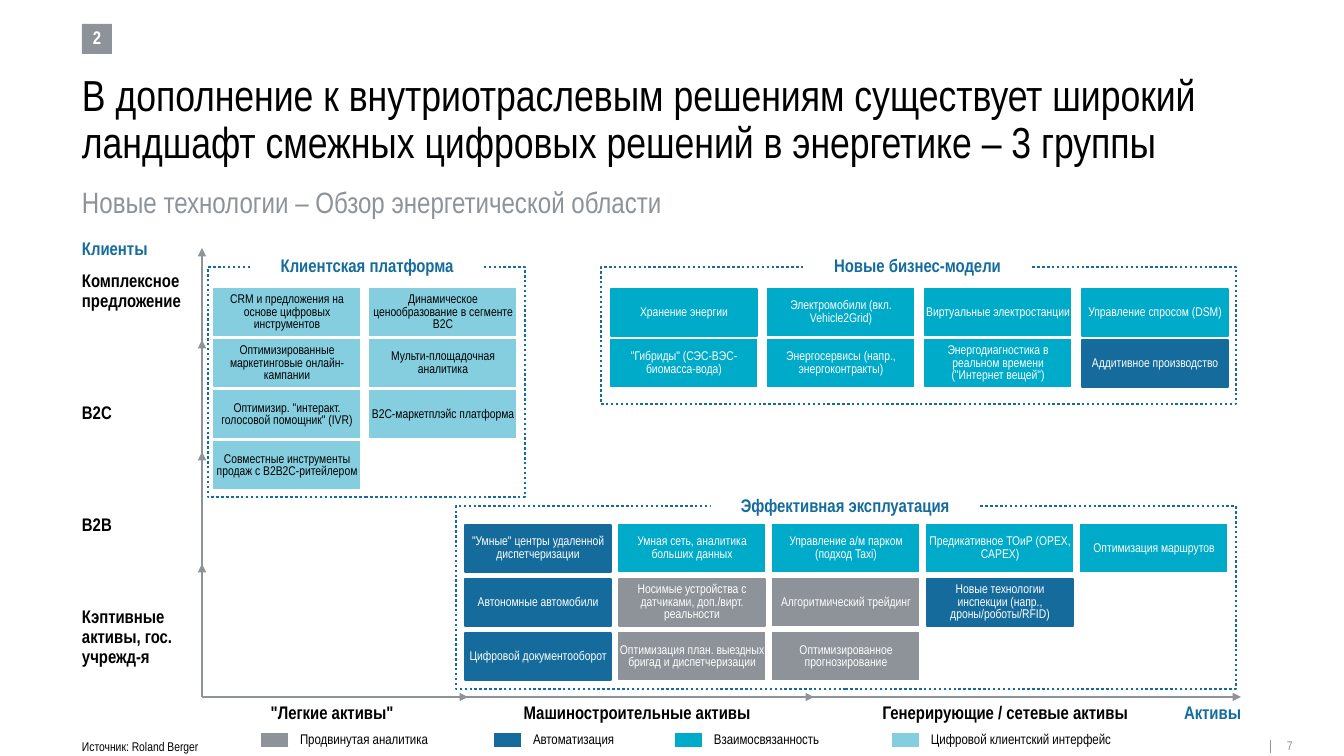
"""Builds the slide on digital solutions adjacent to the energy industry."""
from lxml.etree import SubElement
from pptx import Presentation
from pptx.dml.color import RGBColor
from pptx.enum.dml import MSO_LINE
from pptx.enum.shapes import MSO_CONNECTOR, MSO_SHAPE
from pptx.enum.text import MSO_ANCHOR as ANCHOR, PP_ALIGN as ALIGN
from pptx.oxml.ns import qn
from pptx.util import Pt

PX = 12192000 / 1344
FONT = "Arial Narrow"
COLORS = {
    "black": "000000",
    "white": "FFFFFF",
    "gray": "8D9399",
    "blue": "156C9C",
    "teal": "00AAC9",
    "light": "85CEDF",
}

deck = Presentation()
deck.slide_width, deck.slide_height = round(1344 * PX), round(756 * PX)
page = deck.slides.add_slide(deck.slide_layouts[6])


def add_box(text, place, size=13, color="black", bold=False, align=ALIGN.LEFT, anchor=ANCHOR.TOP,
            spacing=0.9, wrap=True, fill=None, line=None, weight=0.75):
    area = [round(value * PX) for value in place]
    if fill:
        box = page.shapes.add_shape(MSO_SHAPE.RECTANGLE, *area)
        box.shadow.inherit = False
        box.fill.solid()
        box.fill.fore_color.rgb = RGBColor.from_string(COLORS[fill])
        if line:
            box.line.color.rgb = RGBColor.from_string(COLORS[line])
            box.line.width = Pt(weight)
        else:
            box.line.fill.background()
    else:
        box = page.shapes.add_textbox(*area)
    frame = box.text_frame
    frame.margin_left = frame.margin_right = frame.margin_top = frame.margin_bottom = 0
    frame.word_wrap = wrap
    frame.vertical_anchor = anchor
    para = frame.paragraphs[0]
    para.text = text
    para.alignment = align
    para.line_spacing = spacing
    for span in para.runs:
        span.font.name = FONT
        span.font.size = Pt(size)
        span.font.bold = bold
        span.font.color.rgb = RGBColor.from_string(COLORS[color])
    return box


def add_line(left, top, right, bottom, weight, arrow=True):
    ends = [round(value * PX) for value in (left, top, right, bottom)]
    connector = page.shapes.add_connector(MSO_CONNECTOR.STRAIGHT, *ends)
    connector.line.color.rgb = RGBColor.from_string(COLORS["gray"])
    connector.line.width = Pt(weight)
    if arrow:
        SubElement(connector.line._get_or_add_ln(), qn("a:tailEnd"), type="triangle")
    SubElement(connector._element.spPr, qn("a:effectLst"))


add_box("2", (82, 24, 30, 30), color="white", bold=True, align=ALIGN.CENTER,
        anchor=ANCHOR.MIDDLE, wrap=False, fill="gray")
add_box("В дополнение к внутриотраслевым решениям существует широкий ландшафт смежных "
        "цифровых решений в энергетике – 3 группы", (82, 74, 1189, 95), size=31)
add_box("Новые технологии – Обзор энергетической области", (82, 188, 1189, 33),
        size=21, color="gray")

groups = [
    {
        "title": "Клиентская платформа",
        "heading": (252, 257, 230, 20),
        "panel": (208, 267, 317, 230),
        "origin": (214, 289),
        "step": (156, 51),
        "rows": [
            [("CRM и предложения на основе цифровых инструментов", "light"),
             ("Динамическое\vценообразование в сегменте B2C", "light")],
            [("Оптимизированные маркетинговые онлайн-кампании", "light"),
             ("Мульти-площадочная аналитика", "light")],
            [("Оптимизир. \"интеракт. голосовой помощник\" (IVR)", "light"),
             ("B2C-маркетплэйс платформа", "light")],
            [("Совместные инструменты продаж с B2B2C-ритейлером", "light")],
        ],
    },
    {
        "title": "Новые бизнес-модели",
        "heading": (805, 257, 225, 20),
        "panel": (601, 267, 635, 137),
        "origin": (611, 289),
        "step": (157, 51),
        "rows": [
            [("Хранение энергии", "teal"),
             ("Электромобили (вкл. Vehicle2Grid)", "teal"),
             ("Виртуальные электростанции", "teal"),
             ("Управление спросом (DSM)", "teal")],
            [("\"Гибриды\" (СЭС-ВЭС-биомасса-вода)", "teal"),
             ("Энергосервисы (напр., энергоконтракты)", "teal"),
             ("Энергодиагностика в реальном времени (\"Интернет вещей\")", "teal"),
             ("Аддитивное производство", "blue")],
        ],
    },
    {
        "title": "Эффективная эксплуатация",
        "heading": (711, 497, 268, 20),
        "panel": (456, 506, 780, 183),
        "origin": (465, 525),
        "step": (154, 54),
        "rows": [
            [("\"Умные\" центры удаленной диспетчеризации", "blue"),
             ("Умная сеть, аналитика больших данных", "teal"),
             ("Управление а/м парком (подход Taxi)", "teal"),
             ("Предикативное ТОиР (OPEX, CAPEX)", "teal"),
             ("Оптимизация маршрутов", "teal")],
            [("Автономные автомобили", "blue"),
             ("Носимые устройства с датчиками, доп./вирт. реальности", "gray"),
             ("Алгоритмический трейдинг", "gray"),
             ("Новые технологии\vинспекции (напр.,\vдроны/роботы/RFID)", "blue")],
            [("Цифровой документооборот", "blue"),
             ("Оптимизация план. выездных бригад и диспетчеризации", "gray"),
             ("Оптимизированное прогнозирование", "gray")],
        ],
    },
]
thick_cards = {"Хранение энергии", "Управление спросом (DSM)",
               "Носимые устройства с датчиками, доп./вирт. реальности"}

for group in groups:
    panel = add_box("", group["panel"], fill="white", line="blue", weight=1.75)
    panel.line.dash_style = MSO_LINE.ROUND_DOT
    fill_color = panel._element.spPr.find(qn("a:solidFill"))[0]
    SubElement(fill_color, qn("a:alpha"), val="40000")
    add_box(group["title"], group["heading"], color="blue", bold=True,
            align=ALIGN.CENTER, fill="white")
    left, top = group["origin"]
    step_x, step_y = group["step"]
    for row, cards in enumerate(group["rows"]):
        for column, (text, fill) in enumerate(cards):
            thick = fill == "blue" or text in thick_cards
            add_box(text, (left + column * step_x, top + row * step_y, 146, 47), size=9,
                    color="black" if fill == "light" else "white", align=ALIGN.CENTER,
                    anchor=ANCHOR.MIDDLE, spacing=0.8, wrap="\v" not in text or fill == "light",
                    fill=fill, line=fill, weight=1.75 if thick else 0.75)

add_line(202, 697, 1241, 697, 1.75)
add_line(202, 697, 202, 248, 1.75)
for tip in (468, 814):
    add_line(tip - 44, 697, tip, 697, 1.25)
for tip in (340, 452, 564):
    add_line(202, tip + 36, 202, tip, 1.25)

axis_labels = [
    ("Клиенты", (82, 240, 118, 20), "blue", ALIGN.LEFT),
    ("Комплексное предложение", (82, 272, 108, 39), "black", ALIGN.LEFT),
    ("B2C", (82, 404, 108, 20), "black", ALIGN.LEFT),
    ("B2B", (82, 516, 108, 20), "black", ALIGN.LEFT),
    ("Кэптивные активы, гос. учрежд-я", (82, 608, 108, 59), "black", ALIGN.LEFT),
    ("\"Легкие активы\"", (240, 704, 184, 20), "black", ALIGN.CENTER),
    ("Машиностроительные активы", (466, 704, 342, 20), "black", ALIGN.CENTER),
    ("Генерирующие / сетевые активы", (845, 704, 320, 20), "black", ALIGN.CENTER),
    ("Активы", (1067, 704, 174, 20), "blue", ALIGN.RIGHT),
]
for text, place, color, align in axis_labels:
    add_box(text, place, color=color, bold=True, align=align, anchor=ANCHOR.MIDDLE)

legend = [
    ("Продвинутая аналитика", 260, 129, "gray"),
    ("Автоматизация", 493, 83, "blue"),
    ("Взаимосвязанность", 674, 107, "teal"),
    ("Цифровой клиентский интерфейс", 891, 182, "light"),
]
for text, left, width, fill in legend:
    add_box("", (left, 732, 29, 16), fill=fill, line="white")
    add_box(text, (left + 40, 732, width, 15), size=10, wrap=False)

add_box("Источник: Roland Berger", (82, 740, 118, 14), size=9, anchor=ANCHOR.BOTTOM, wrap=False)
add_line(1271, 740, 1271, 753, 0.75, arrow=False)
add_box("7", (1287, 740, 13, 14), size=9, color="gray", wrap=False)

deck.save("out.pptx")
